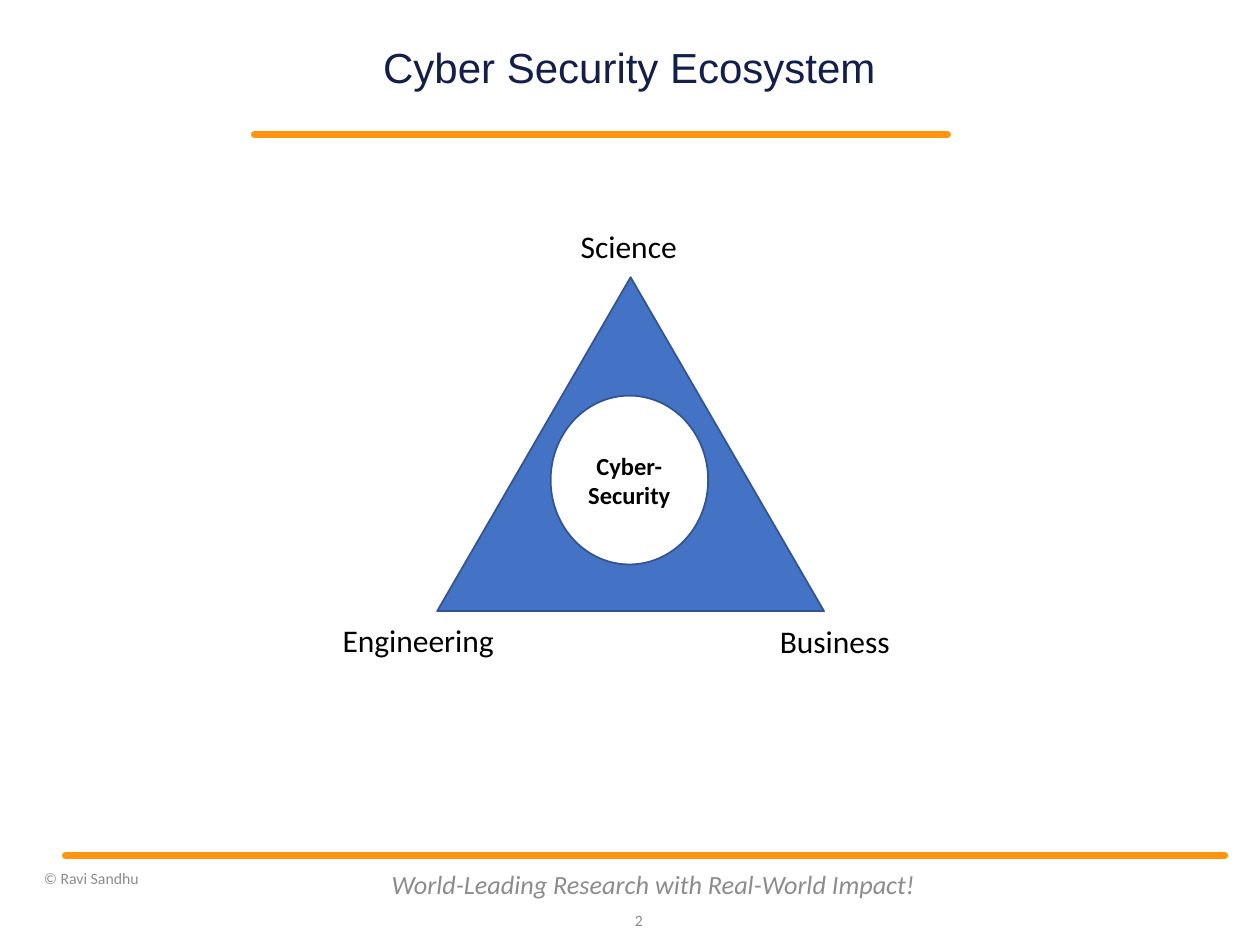
from lxml.etree import SubElement
from pptx import Presentation
from pptx.dml.color import RGBColor as RGB
from pptx.enum.shapes import MSO_CONNECTOR as Link, MSO_SHAPE as Kind
from pptx.enum.text import MSO_ANCHOR as Anchor, MSO_AUTO_SIZE as Fit, PP_ALIGN as Align
from pptx.oxml.ns import qn
from pptx.util import Inches, Pt

TITLE = "Cyber Security Ecosystem", (2.37, 0.3, 5.25, 0.51)
CORE = ["Cyber-", "Security"]
RULES = [(2.02, 7.52, 1.07), (0.52, 9.72, 6.79)]
SHAPES = [
    (Kind.ISOSCELES_TRIANGLE, (3.47, 2.2, 3.07, 2.65), "4472C4", []),
    (Kind.OVAL, (4.37, 3.14, 1.25, 1.34), "FFFFFF", CORE),
]
HEAD = {"size": 24, "name": "Arial", "color": "131F49"}
BOLD = {"size": 14, "name": "Calibri", "color": "000000", "bold": True}
LABEL = {"size": 18, "name": "Calibri", "color": "000000"}
SMALL = {"size": 9, "name": "Calibri", "color": "8C8C8C"}
MOTTO = {**SMALL, "size": 15, "italic": True}
FOOTER = [
    ("World-Leading Research with Real-World Impact!", (3, 6.82, 4.37, 0.4), MOTTO, Align.CENTER),
    ("2", (4.8, 7.1, 0.4, 0.4), SMALL, Align.RIGHT),
    ("© Ravi Sandhu", (0.25, 6.79, 2.75, 0.36), SMALL, Align.LEFT),
]
CORNERS = [
    ("Science", (4.51, 1.75, 0.98, 0.4)),
    ("Engineering", (2.62, 4.88, 1.42, 0.4)),
    ("Business", (6.09, 4.89, 1.08, 0.4)),
]


def paint(target, color):
    target.rgb = RGB.from_string(color)


def write(frame, lines, style, align, anchor=Anchor.MIDDLE):
    frame.vertical_anchor = anchor
    for i, line in enumerate(lines):
        para = frame.add_paragraph() if i else frame.paragraphs[0]
        para.alignment = align
        run = para.add_run()
        run.text = line
        for key, value in style.items():
            if key == "color":
                paint(run.font.color, value)
            else:
                setattr(run.font, key, Pt(value) if key == "size" else value)


def add_rule(slide, left, right, top):
    rule = slide.shapes.add_connector(Link.STRAIGHT, *map(Inches, (left, top, right, top)))
    paint(rule.line.color, "FF950E")
    rule.line.width = Pt(4)
    props = rule._element.spPr
    props.find(qn("a:ln")).set("cap", "rnd")
    SubElement(props, qn("a:effectLst"))


def add_shape(slide, kind, box, fill, lines):
    shape = slide.shapes.add_shape(kind, *map(Inches, box))
    shape.shadow.inherit = False
    shape.fill.solid()
    paint(shape.fill.fore_color, fill)
    paint(shape.line.color, "325491")
    shape.line.width = Pt(1)
    write(shape.text_frame, lines, BOLD, Align.CENTER)


def add_text(slide, text, box, style, align, anchor=Anchor.MIDDLE):
    frame = slide.shapes.add_textbox(*map(Inches, box)).text_frame
    frame.word_wrap = False
    write(frame, [text], style, align, anchor)
    return frame


def add_title(slide, text, box):
    title = slide.shapes.title
    title.left, title.top, title.width, title.height = map(Inches, box)
    frame = title.text_frame
    frame.auto_size = Fit.NONE
    for side in ("left", "top", "right", "bottom"):
        setattr(frame, f"margin_{side}", 0)
    write(frame, [text], HEAD, Align.CENTER)
    frame.paragraphs[0].line_spacing = 0.9


def main():
    deck = Presentation()
    deck.slide_width, deck.slide_height = Inches(10), Inches(7.5)
    slide = deck.slides.add_slide(deck.slide_layouts[5])
    add_title(slide, *TITLE)
    for rule in RULES:
        add_rule(slide, *rule)
    for item in FOOTER:
        add_text(slide, *item)
    for item in SHAPES:
        add_shape(slide, *item)
    for text, box in CORNERS:
        frame = add_text(slide, text, box, LABEL, Align.LEFT, Anchor.TOP)
        frame.auto_size = Fit.SHAPE_TO_FIT_TEXT
    deck.save("out.pptx")


if __name__ == "__main__":
    main()
